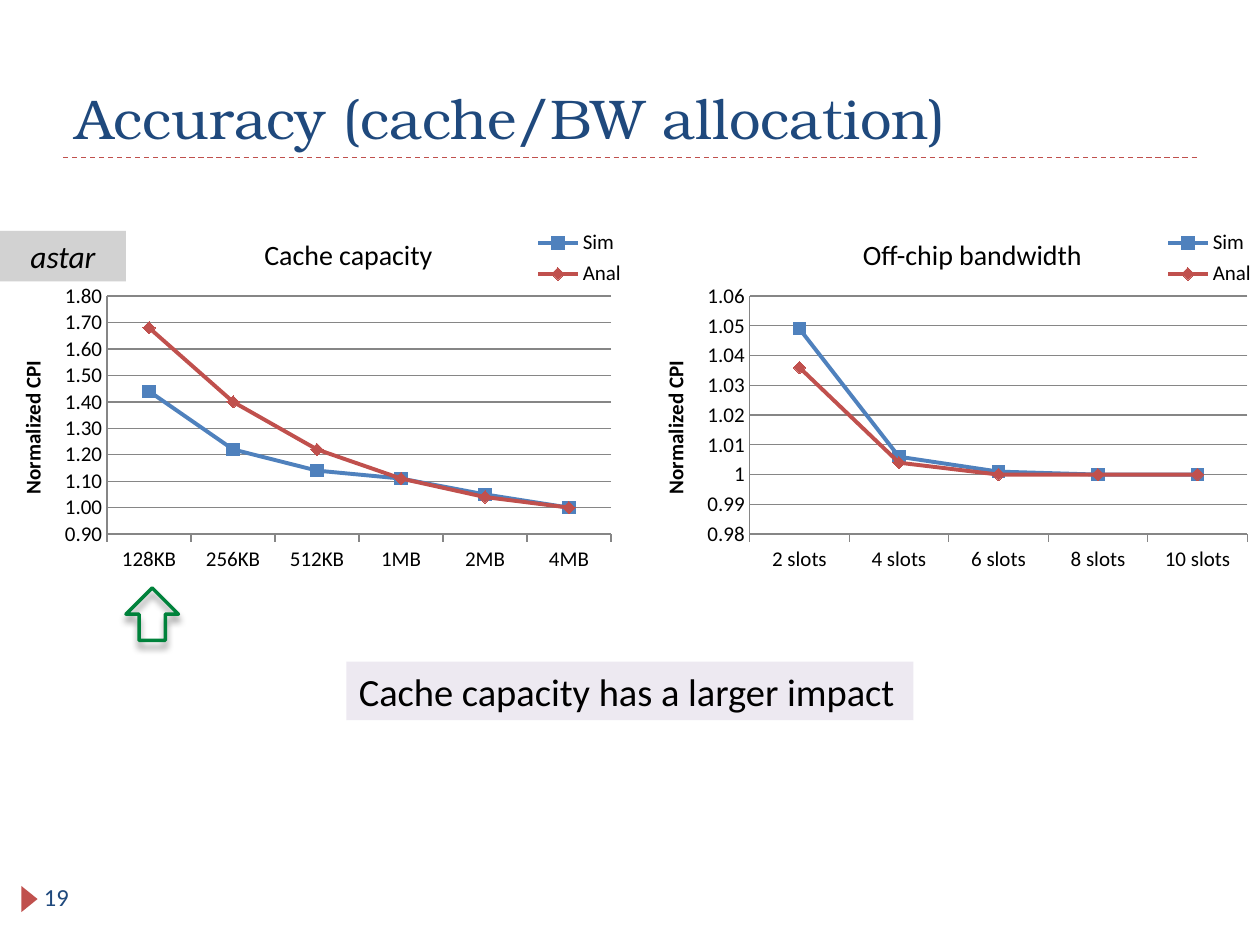
from lxml import etree
from pptx import Presentation
from pptx import util as u
from pptx.chart.data import CategoryChartData
from pptx.dml.color import RGBColor
from pptx.enum import chart as ch, dml, shapes, text
from pptx.oxml import parse_xml
from pptx.oxml.ns import nsdecls, qn

HEX = {"ink": "000000", "navy": "1F497D", "red": "C0504D", "blue": "4F81BD",
       "grid": "868686", "gray": "BFBFBF", "lilac": "E6E0EC", "green": "00823B"}
COLS, ROWS = 120, 90
CELL = u.Inches(10) // COLS
SANS, SERIF = "Calibri", "TeX Gyre Bonum"


def rgb(name):
    return RGBColor.from_string(HEX[name])


def cells(*spans):
    return [u.Emu(round(s * CELL)) for s in spans]


def style(font, size, hue="ink", face=SANS, bold=False):
    font.size, font.name, font.bold = u.Pt(size), face, bold
    font.color.rgb = rgb(hue)


def write(frame, words, size, hue="ink", face=SANS, align=text.PP_ALIGN.LEFT):
    frame.text = words
    para = frame.paragraphs[0]
    para.alignment = align
    style(para.font, size, hue, face)
    return para


def label(slide, box, words, size, hue="ink"):
    frame = slide.shapes.add_textbox(*cells(*box)).text_frame
    frame.word_wrap = True
    write(frame, words, size, hue)


def shape(slide, kind, box, fill=None, alpha=None):
    item = slide.shapes.add_shape(kind, *cells(*box))
    item.shadow.inherit = False
    item.line.fill.background()
    if fill:
        item.fill.solid()
        item.fill.fore_color.rgb = rgb(fill)
    else:
        item.fill.background()
    if alpha:
        tint = item.fill._xPr.find(".//" + qn("a:srgbClr"))
        etree.SubElement(tint, qn("a:alpha")).set("val", str(alpha * 1000))
    return item


def tag(slide, box, words, size, fill, align=text.PP_ALIGN.LEFT, wrap=True):
    item = shape(slide, shapes.MSO_SHAPE.RECTANGLE, box, fill, 70)
    item.text_frame.word_wrap = wrap
    return write(item.text_frame, words, size, align=align)


def header(slide, box):
    left, top, wide, high = box
    title = slide.shapes.title
    title.left, title.top, title.width, title.height = cells(*box)
    frame = title.text_frame
    frame.vertical_anchor = text.MSO_ANCHOR.BOTTOM
    frame.auto_size = text.MSO_AUTO_SIZE.NONE
    write(frame, "Accuracy (cache/BW allocation)", 32, "navy", SERIF)
    base = top + high
    rule = slide.shapes.add_connector(
        shapes.MSO_CONNECTOR.STRAIGHT, *cells(left, base, left + wide, base))
    rule.line.color.rgb = rgb("red")
    rule.line.width = u.Pt(0.75)
    rule.line.dash_style = dml.MSO_LINE.DASH
    etree.SubElement(rule._element.spPr, qn("a:effectLst"))


def footer(slide, box):
    left, top, wide, high = box
    mark = shape(slide, shapes.MSO_SHAPE.ISOSCELES_TRIANGLE,
                 (left - 1.45, top + 1.45, 2.5, 1.55), "red")
    mark.rotation = 90
    label(slide, box, "19", 14, "navy")


def layout(node, spot, frame, inner=False):
    for old in node.findall(qn("c:layout")):
        node.remove(old)
    parts = [("layoutTarget", "inner")] if inner else []
    parts += [("xMode", "edge"), ("yMode", "edge")] + list(zip("xywh", frame))
    body = "".join(f'<c:{k} val="{v}"/>' for k, v in parts)
    node.insert(spot, parse_xml(
        f'<c:layout {nsdecls("c")}><c:manualLayout>{body}</c:manualLayout></c:layout>'))


def panel(slide, box, name, inset, cats, sim, anal, scale, fmt, plot):
    left, top, wide, high = box
    data = CategoryChartData()
    data.categories = cats
    data.add_series("Sim", sim)
    data.add_series("Anal", anal)
    chart = slide.shapes.add_chart(
        ch.XL_CHART_TYPE.LINE_MARKERS, *cells(*box), data).chart
    style(chart.font, 12)
    chart.has_title = False
    chart.has_legend = True
    chart.legend.position = ch.XL_LEGEND_POSITION.RIGHT
    chart.legend.include_in_layout = False
    style(chart.legend.font, 12)
    layout(chart.legend._element, 1, (0.84, 0.01, 0.16, 0.18))
    x, wid = plot
    layout(chart._chartSpace.chart.plotArea, 0, (x, 0.2, wid, 0.63), True)

    axis = chart.value_axis
    axis.minimum_scale, axis.maximum_scale, axis.major_unit = scale
    axis.major_tick_mark = ch.XL_TICK_MARK.NONE
    axis.tick_labels.number_format = fmt
    axis.tick_labels.number_format_is_linked = False
    frame = axis.axis_title.text_frame
    frame.text = "Normalized CPI"
    style(frame.paragraphs[0].font, 12, bold=True)
    chart.category_axis.major_tick_mark = ch.XL_TICK_MARK.OUTSIDE
    for line in (axis.format.line, axis.major_gridlines.format.line,
                 chart.category_axis.format.line):
        line.color.rgb = rgb("grid")
        line.width = u.Pt(0.75)

    chart.plots[0].vary_by_categories = False
    marks = ch.XL_MARKER_STYLE
    looks = [("blue", marks.SQUARE), ("red", marks.DIAMOND)]
    for line, (hue, mark) in zip(chart.plots[0].series, looks):
        line.smooth = False
        line.format.line.color.rgb = rgb(hue)
        line.format.line.width = u.Pt(2.25)
        line.marker.style, line.marker.size = mark, 7
        line.marker.format.fill.solid()
        line.marker.format.fill.fore_color.rgb = rgb(hue)
        line.marker.format.line.color.rgb = rgb(hue)
    shift, span = inset
    label(slide, (left + shift, top + 1, span, 4.4), name, 16)


def arrow(slide, box):
    item = shape(slide, shapes.MSO_SHAPE.UP_ARROW, box)
    item.line.color.rgb = rgb("green")
    item.line.width = u.Pt(2)
    props = item._element.spPr
    props.remove(props.find(qn("a:effectLst")))
    props.append(parse_xml(
        f'<a:effectLst {nsdecls("a")}><a:outerShdw blurRad="50800" dist="43180" '
        'dir="5400000"><a:srgbClr val="000000"><a:alpha val="40000"/></a:srgbClr>'
        '</a:outerShdw></a:effectLst>'))


def main():
    deck = Presentation()
    deck.slide_width, deck.slide_height = cells(COLS, ROWS)
    slide = deck.slides.add_slide(deck.slide_layouts[5])
    half = COLS / 2
    header(slide, (6, 2, 108, 13))
    footer(slide, (3, 83.4, 26, 4.8))
    panel(slide, (0, 21, half, 36), "Cache capacity", (24, 19),
          ["128KB", "256KB", "512KB", "1MB", "2MB", "4MB"],
          [1.44, 1.22, 1.14, 1.11, 1.05, 1], [1.68, 1.4, 1.22, 1.11, 1.04, 1],
          (0.9, 1.8, 0.1), "0.00", (0.17, 0.8))
    panel(slide, (half, 21, half, 36), "Off-chip bandwidth", (21, 25),
          [f"{n} slots" for n in range(2, 11, 2)],
          [1.049, 1.006, 1.001, 1, 1], [1.036, 1.004, 1, 1, 1],
          (0.98, 1.06, 0.01), "General", (0.19, 0.79))
    name = tag(slide, (0, 22, 12, 4.8), "astar", 18, "gray", text.PP_ALIGN.CENTER)
    name.font.italic = True
    tag(slide, (33, 63, 54, 5.6), "Cache capacity has a larger impact", 22,
        "lilac", wrap=False)
    arrow(slide, (12, 56, 5, 5))
    deck.save("out.pptx")


if __name__ == "__main__":
    main()
